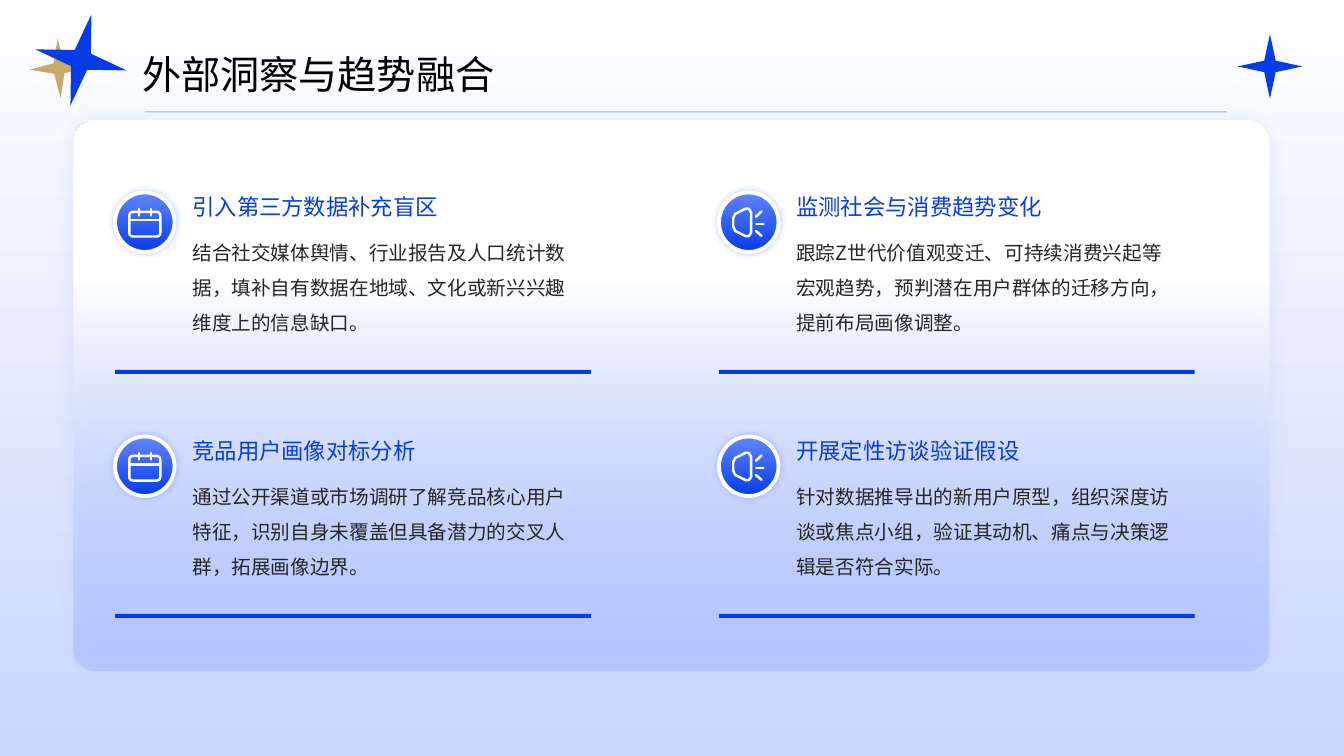
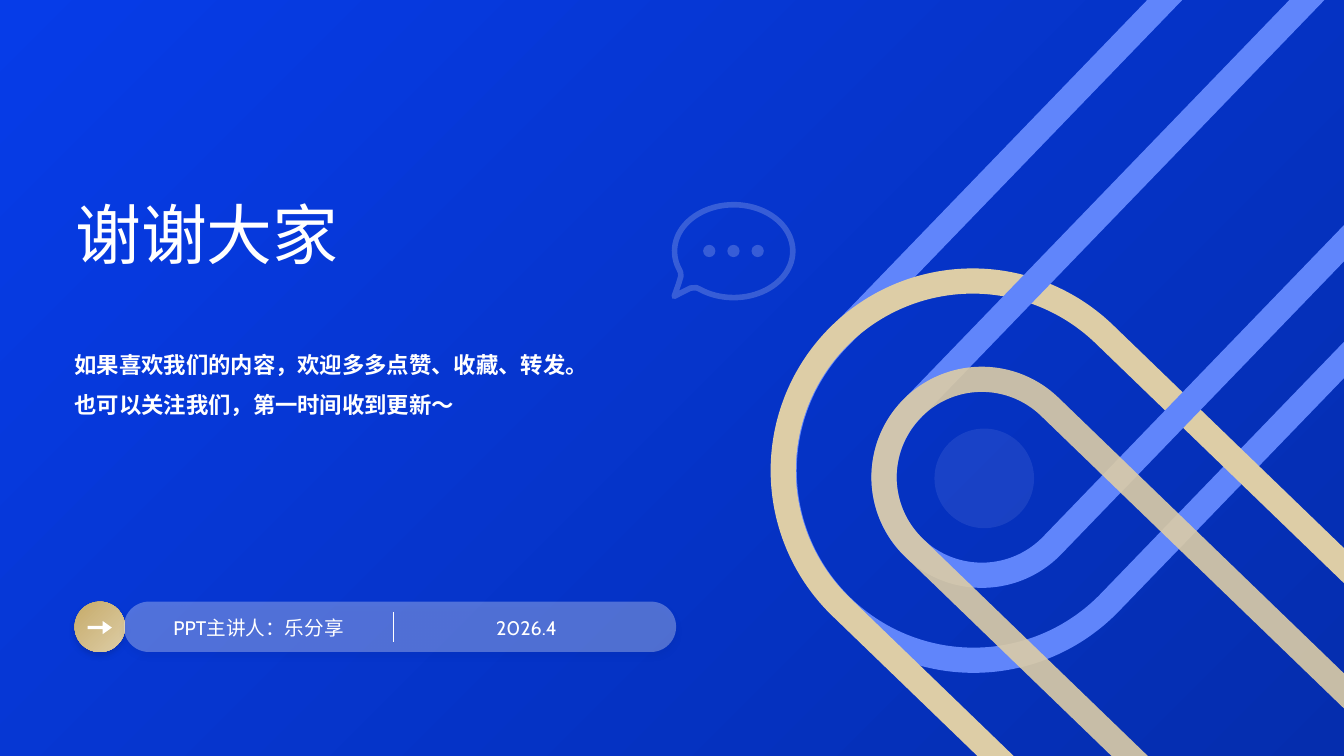
import math

import lxml.etree
import pptx
import pptx.dml.color
import pptx.enum.shapes
import pptx.enum.text
import pptx.oxml.ns
import pptx.util

Cm = pptx.util.Cm
Pt = pptx.util.Pt
qn = pptx.oxml.ns.qn
SHAPE = pptx.enum.shapes.MSO_SHAPE
ALIGN = pptx.enum.text.PP_ALIGN
ANCHOR = pptx.enum.text.MSO_ANCHOR

COLORS = {
    "white": "FFFFFF", "black": "000000", "text": "262626",
    "blue": "063CE8", "deep": "052DAE", "sky": "6085FB", "navy": "031E74",
    "pale": "CAD6FE", "mist": "95AEFC", "gold": "C6AB6A", "sand": "DDCDA6",
}
CJK_FONT = "Noto Sans CJK SC"
LATIN_FONT = "Cabin"


def rgb(name):
    return pptx.dml.color.RGBColor.from_string(COLORS[name])


def set_alpha(color_parent, percent):
    """Make the colour inside a fill, line or gradient stop see-through."""
    for color in color_parent.iter(qn("a:srgbClr")):
        lxml.etree.SubElement(color, qn("a:alpha"), val=str(percent * 1000))


def set_gradient(fill, start, end, angle, start_at=0):
    fill.gradient()
    fill.gradient_angle = 360 - angle
    for stop, name, position in zip(fill.gradient_stops, (start, end), (start_at, 1)):
        stop.color.rgb = rgb(name)
        stop.position = position


class Deck:
    def __init__(self):
        self.file = pptx.Presentation()
        self.file.slide_width = Cm(33.87)
        self.file.slide_height = Cm(19.05)
        self.page = None

    def new_page(self, start, end, angle):
        self.page = self.file.slides.add_slide(self.file.slide_layouts[5])
        set_gradient(self.page.background.fill, start, end, angle)

    def format_text(self, box, text, size, color, font, spacing, bold, align, anchor, inset):
        frame = box.text_frame
        frame.word_wrap = True
        frame.auto_size = pptx.enum.text.MSO_AUTO_SIZE.NONE
        frame.vertical_anchor = anchor
        if not inset:
            frame.margin_left = frame.margin_right = 0
            frame.margin_top = frame.margin_bottom = 0
        frame.text = text
        paragraph = frame.paragraphs[0]
        paragraph.alignment = align
        paragraph.line_spacing = spacing
        span = paragraph.runs[0]
        span.font.size = Pt(size)
        span.font.bold = bold
        span.font.color.rgb = rgb(color)
        span.font.name = font
        lxml.etree.SubElement(span.font._element, qn("a:ea"), typeface=CJK_FONT)

    def title(self, text, left, top, width, height, size, color, font, spacing):
        box = self.page.shapes.title
        box.left, box.top, box.width, box.height = map(Cm, (left, top, width, height))
        self.format_text(box, text, size, color, font, spacing, False,
                         ALIGN.LEFT, ANCHOR.MIDDLE, False)

    def text(self, text, left, top, width, height, size, color, font=CJK_FONT, spacing=1.1,
             bold=False, align=ALIGN.LEFT, anchor=ANCHOR.TOP, inset=False):
        box = self.page.shapes.add_textbox(*map(Cm, (left, top, width, height)))
        self.format_text(box, text, size, color, font, spacing, bold, align, anchor, inset)

    def stroke(self, shape, color, weight, alpha=None, round_cap=False):
        shape.line.color.rgb = rgb(color)
        shape.line.width = Pt(weight)
        outline = shape._element.spPr.find(qn("a:ln"))
        if alpha:
            set_alpha(outline, alpha)
        if round_cap:
            outline.set("cap", "rnd")
            lxml.etree.SubElement(outline, qn("a:round"))

    def shape(self, kind, left, top, width, height, fill=None, alpha=None,
              adjust=(), rotation=0):
        shape = self.page.shapes.add_shape(kind, *map(Cm, (left, top, width, height)))
        shape.shadow.inherit = False
        shape.rotation = rotation
        for index, value in enumerate(adjust):
            shape.adjustments[index] = value
        shape.line.fill.background()
        if fill:
            shape.fill.solid()
            shape.fill.fore_color.rgb = rgb(fill)
            if alpha:
                set_alpha(shape._element.spPr.find(qn("a:solidFill")), alpha)
        else:
            shape.fill.background()
        return shape

    def shadow(self, shape, color, alpha, blur, distance=0, direction=0):
        effects = shape._element.spPr.find(qn("a:effectLst"))
        outer = lxml.etree.SubElement(
            effects, qn("a:outerShdw"), blurRad=str(Pt(blur)), dist=str(Pt(distance)),
            dir=str(direction * 60000), algn="ctr", rotWithShape="0")
        lxml.etree.SubElement(outer, qn("a:srgbClr"), val=COLORS[color])
        set_alpha(outer, alpha)

    def line(self, x1, y1, x2, y2, color, weight, alpha=None, round_cap=False):
        line = self.page.shapes.add_connector(
            pptx.enum.shapes.MSO_CONNECTOR.STRAIGHT, *map(Cm, (x1, y1, x2, y2)))
        self.stroke(line, color, weight, alpha, round_cap)
        lxml.etree.SubElement(line._element.spPr, qn("a:effectLst"))

    def outline(self, points, color, weight, alpha=None):
        """Draw a closed, unfilled outline through points given in centimetres."""
        points = [(Cm(x), Cm(y)) for x, y in points]
        builder = self.page.shapes.build_freeform(*points[0])
        builder.add_line_segments(points[1:], close=True)
        shape = builder.convert_to_shape()
        shape.shadow.inherit = False
        shape.fill.background()
        self.stroke(shape, color, weight, alpha, round_cap=True)

    def calendar(self, x, y):
        frame = self.shape(SHAPE.ROUNDED_RECTANGLE, x + 0.36, y + 0.49, 0.78, 0.62,
                           adjust=[0.14])
        self.stroke(frame, "white", 1.75)
        self.line(x + 0.36, y + 0.7, x + 1.14, y + 0.7, "white", 1.75)
        for tick in (0.6, 0.9):
            self.line(x + tick, y + 0.41, x + tick, y + 0.58, "white", 1.75, round_cap=True)

    def megaphone(self, x, y):
        horn = [(0.36, 0.64), (0.36, 0.86), (0.41, 0.97), (0.67, 1.1), (0.75, 1.1),
                (0.81, 1.02), (0.81, 0.51), (0.75, 0.41), (0.67, 0.41), (0.41, 0.54)]
        self.outline([(x + dx, y + dy) for dx, dy in horn], "white", 1.75)
        for x1, y1, x2, y2 in ((0.93, 0.61, 1.07, 0.48), (0.94, 0.79, 1.12, 0.79),
                               (0.93, 0.97, 1.07, 1.09)):
            self.line(x + x1, y + y1, x + x2, y + y2, "white", 1.75, round_cap=True)

    def card(self, x, y, icon, heading, body):
        disc = self.shape(SHAPE.FLOWCHART_CONNECTOR, x, y, 1.5, 1.5)
        set_gradient(disc.fill, "blue", "sky", 270)
        self.stroke(disc, "white", 2.75)
        self.shadow(disc, "sky", 40, 5)
        icon(x, y)
        self.text(heading, x + 1.7, y - 0.18, 10, 1.02, 16, "blue", inset=True)
        self.text(body, x + 1.7, y + 0.79, 10, 3.48, 14, "text", spacing=1.5, inset=True)
        self.shape(SHAPE.RECTANGLE, x, y + 4.47, 11.99, 0.1, "blue")

    def speech_bubble(self, color, alpha):
        center_x, center_y, radius_x, radius_y = 18.49, 6.33, 1.49, 1.17
        angles = [math.radians(degree) for degree in range(-203, 126, 4)]
        rim = [(center_x + radius_x * math.cos(angle), center_y + radius_y * math.sin(angle))
               for angle in angles]
        tail = [(17.55, 7.25), (17.4, 7.26), (17.2, 7.36), (16.99, 7.47),
                (17.1, 7.16), (17.16, 6.96), (17.15, 6.86)]
        self.outline(rim + tail, color, 4, alpha)
        for column in (-1, 0, 1):
            self.shape(SHAPE.OVAL, center_x - 0.16 + 0.61 * column, center_y - 0.16,
                       0.31, 0.31, color, alpha)


def trends_page(deck):
    deck.new_page("white", "pale", 90)
    deck.title("外部洞察与趋势融合", 3.58, 0.94, 20.07, 1.5, 28, "black", CJK_FONT, 1.3)
    panel = deck.shape(SHAPE.ROUNDED_RECTANGLE, 1.85, 3.05, 30.15, 13.84, adjust=[0.04])
    set_gradient(panel.fill, "white", "mist", 90, start_at=0.29)
    set_alpha(panel.fill.gradient_stops[1]._gs, 40)
    deck.shadow(panel, "blue", 8, 15)

    cards = [
        ("引入第三方数据补充盲区",
         "结合社交媒体舆情、行业报告及人口统计数据，填补自有数据在地域、文化或新兴兴趣维度上的信息缺口。"),
        ("监测社会与消费趋势变化",
         "跟踪Z世代价值观变迁、可持续消费兴起等宏观趋势，预判潜在用户群体的迁移方向，提前布局画像调整。"),
        ("竞品用户画像对标分析",
         "通过公开渠道或市场调研了解竞品核心用户特征，识别自身未覆盖但具备潜力的交叉人群，拓展画像边界。"),
        ("开展定性访谈验证假设",
         "针对数据推导出的新用户原型，组织深度访谈或焦点小组，验证其动机、痛点与决策逻辑是否符合实际。"),
    ]
    icons = (deck.calendar, deck.megaphone)
    for index, (heading, body) in enumerate(cards):
        row, column = divmod(index, 2)
        deck.card(2.9 + 15.22 * column, 4.85 + 6.15 * row, icons[column], heading, body)

    for left, top, size, color, rotation in (
            (0.74, 0.97, 1.5, "gold", 357.2), (0.86, 0.33, 2.36, "blue", 13),
            (31.19, 0.86, 1.63, "blue", 0)):
        deck.shape(SHAPE.STAR_4_POINT, left, top, size, size, color, rotation=rotation)
    deck.line(3.65, 2.82, 30.92, 2.82, "blue", 0.75, alpha=38)


def closing_page(deck):
    deck.new_page("blue", "deep", 45)
    tracks = [
        (24.87, -5.56, 9.55, 24.26, 224, "sky", None),
        (23.44, 5.51, 9.55, 19.84, 314, "sand", None),
        (26.77, -1.55, 4.93, 17.86, 224, "sky", None),
        (25.76, 8.08, 4.93, 14.61, 314, "sand", 90),
    ]
    for left, top, width, height, rotation, color, alpha in tracks:
        track = deck.shape(SHAPE.ROUND_2_SAME_RECTANGLE, left, top, width, height,
                           adjust=[0.5, 0], rotation=rotation)
        deck.stroke(track, color, 18, alpha)
    deck.shape(SHAPE.OVAL, 23.55, 10.8, 2.51, 2.51, "pale", 10)

    button = deck.shape(SHAPE.OVAL, 1.88, 15.16, 1.27, 1.27)
    set_gradient(button.fill, "gold", "sand", 45)
    deck.shape(SHAPE.RIGHT_ARROW, 2.21, 15.65, 0.61, 0.33, "white", adjust=[0.24, 0.7])
    pill = deck.shape(SHAPE.ROUNDED_RECTANGLE, 3.12, 15.16, 13.92, 1.27, "white", 30,
                      adjust=[0.5])
    for shape in (button, pill):
        deck.shadow(shape, "navy", 25, 4, 3, 90)
    for left, label in ((3.89, "PPT主讲人：乐分享"), (10.64, "2026.4")):
        deck.text(label, left, 15.37, 5.26, 0.86, 14, "white", LATIN_FONT,
                  align=ALIGN.CENTER, anchor=ANCHOR.MIDDLE)
    deck.line(9.91, 15.42, 9.91, 16.18, "white", 1)

    deck.speech_bubble("white", 20)
    deck.title("谢谢大家", 1.9, 2.03, 16.36, 7.47, 47, "white", LATIN_FONT, 1.1)
    deck.text("如果喜欢我们的内容，欢迎多多点赞、收藏、转发。也可以关注我们，第一时间收到更新～",
              1.88, 8.51, 13.26, 2.29, 16, "white", spacing=1.5, bold=True)


def main():
    deck = Deck()
    trends_page(deck)
    closing_page(deck)
    deck.file.save("out.pptx")


if __name__ == "__main__":
    main()
